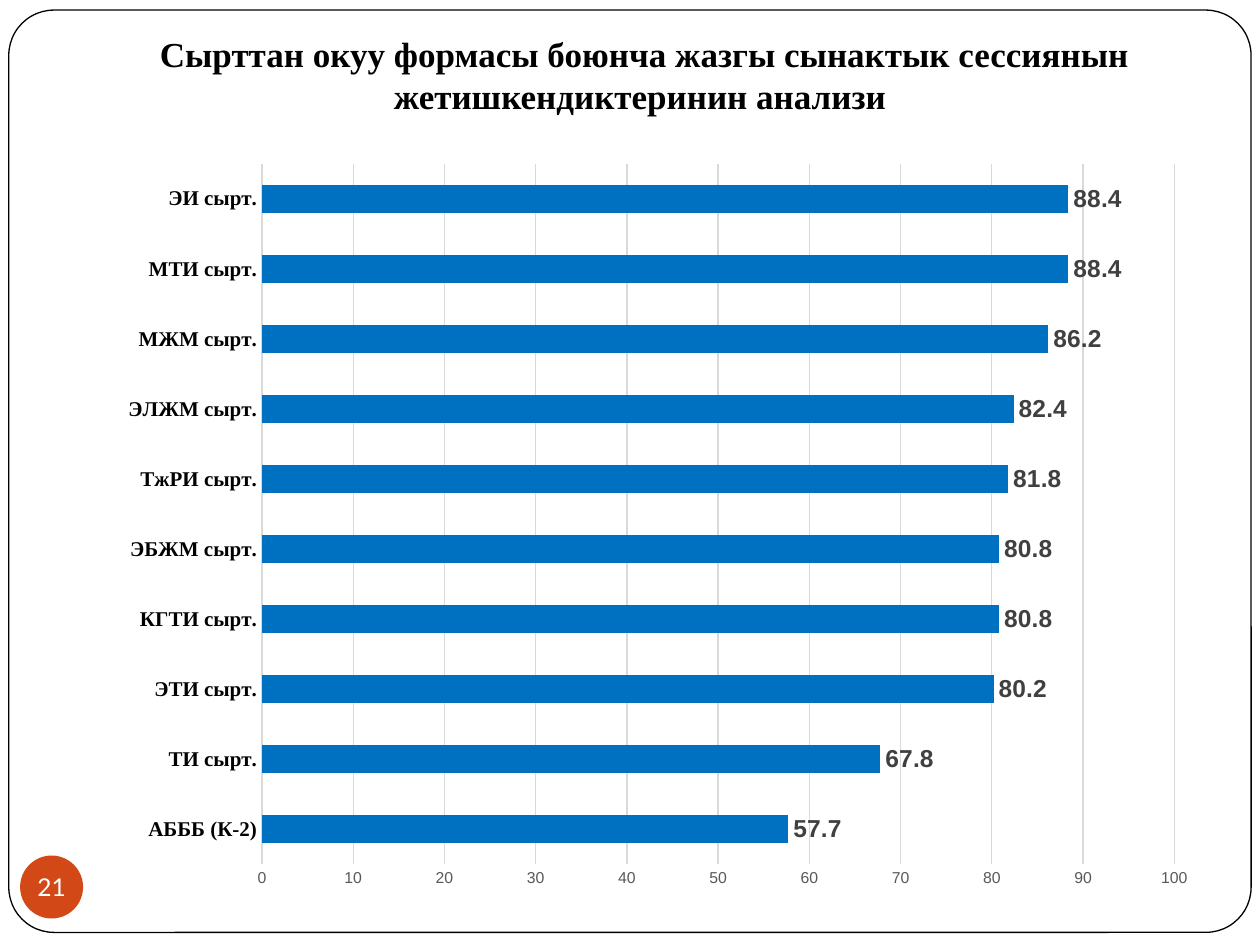
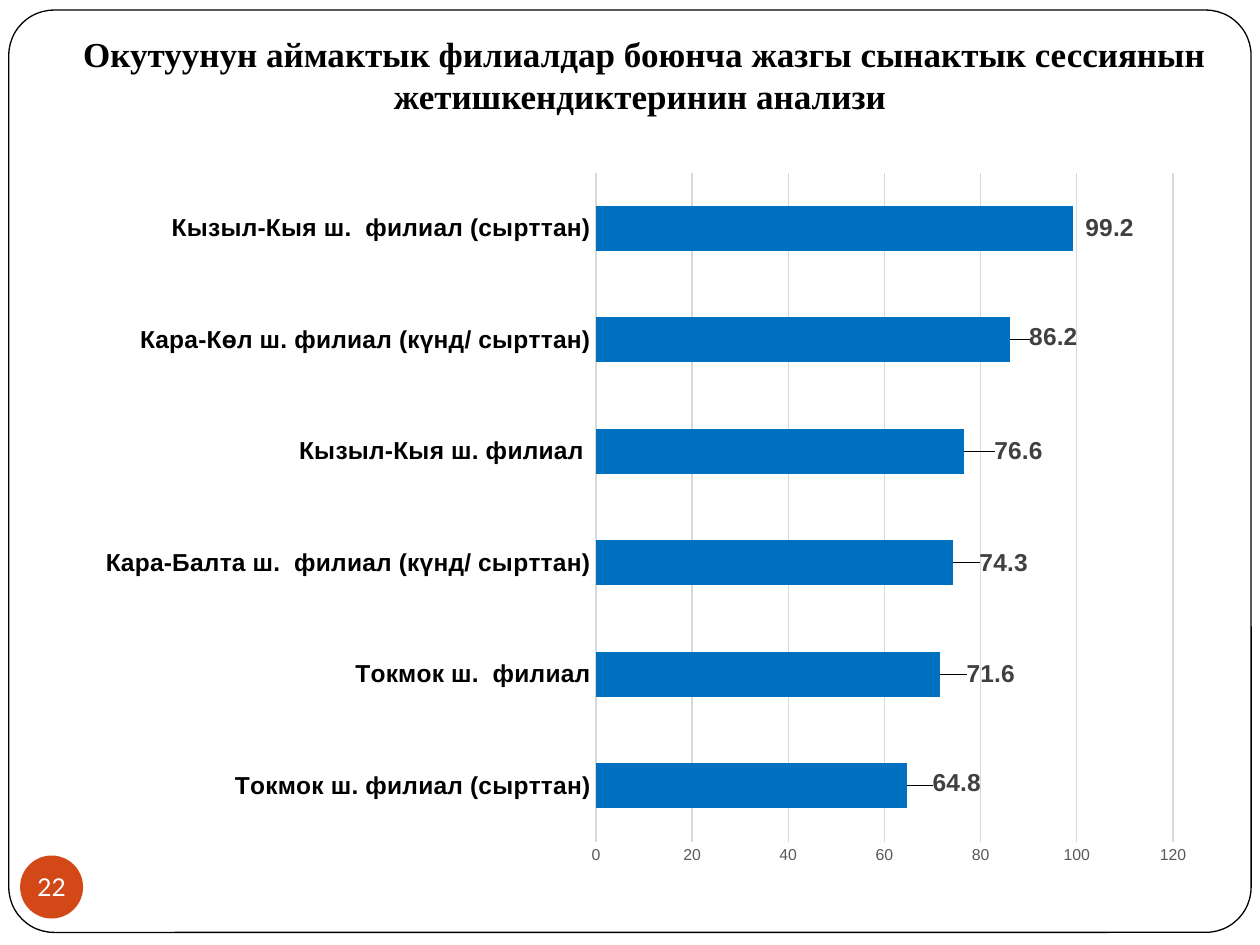
import pptx
import pptx.chart.data
import pptx.dml.color
import pptx.enum.chart
import pptx.enum.shapes
import pptx.enum.text
import pptx.oxml
import pptx.oxml.ns
import pptx.util
from pptx.util import Inches

WHITE = pptx.dml.color.RGBColor(0xFF, 0xFF, 0xFF)
BLACK = pptx.dml.color.RGBColor(0, 0, 0)
ORANGE = pptx.dml.color.RGBColor(0xD3, 0x48, 0x17)
BLUE = pptx.dml.color.RGBColor(0x00, 0x70, 0xC0)
DARK_GREY = pptx.dml.color.RGBColor(0x40, 0x40, 0x40)
MID_GREY = pptx.dml.color.RGBColor(0x59, 0x59, 0x59)
GRID_GREY = pptx.dml.color.RGBColor(0xD9, 0xD9, 0xD9)
SERIF = "Times New Roman"
SANS = "Arial"

EXTRAMURAL_RESULTS = [
    ("АБББ (К-2)", 57.7),
    ("ТИ сырт.", 67.8),
    ("ЭТИ сырт.", 80.2),
    ("КГТИ сырт.", 80.8),
    ("ЭБЖМ сырт.", 80.8),
    ("ТжРИ сырт.", 81.8),
    ("ЭЛЖМ сырт.", 82.4),
    ("МЖМ сырт.", 86.2),
    ("МТИ сырт.", 88.4),
    ("ЭИ сырт.", 88.4),
]
BRANCH_RESULTS = [
    ("Токмок ш. филиал (сырттан)", 64.8),
    ("Токмок ш.  филиал", 71.6),
    ("Кара-Балта ш.  филиал (күнд/ сырттан)", 74.3),
    ("Кызыл-Кыя ш. филиал ", 76.6),
    ("Кара-Көл ш. филиал (күнд/ сырттан)", 86.2),
    ("Кызыл-Кыя ш.  филиал (сырттан)", 99.2),
]
# Label shifts in inches (right, down), one for each branch
BRANCH_LABEL_SHIFTS = [(0.16, -0.02), (0.17, 0), (0.17, 0),
                       (0.2, 0), (0.11, -0.02), (0.06, 0)]


def style_font(font, name, size, color, bold=False):
    font.name = name
    font.size = pptx.util.Pt(size)
    font.color.rgb = color
    font.bold = bold


def add_plain_shape(page, kind, place, fill):
    shape = page.shapes.add_shape(kind, *map(Inches, place))
    shape.shadow.inherit = False
    shape.fill.solid()
    shape.fill.fore_color.rgb = fill
    return shape


def add_frame(page):
    frame = add_plain_shape(page, pptx.enum.shapes.MSO_SHAPE.ROUNDED_RECTANGLE,
                            (0.07, 0.08, 9.86, 7.32), WHITE)
    frame.adjustments[0] = 0.049
    frame.line.color.rgb = BLACK
    frame.line.width = pptx.util.Pt(0.75)


def write_centred(shape, text, name, size, color, bold=False):
    para = shape.text_frame.paragraphs[0]
    para.text = text
    para.alignment = pptx.enum.text.PP_ALIGN.CENTER
    style_font(para.runs[0].font, name, size, color, bold)


def add_page_number(page, number):
    badge = add_plain_shape(page, pptx.enum.shapes.MSO_SHAPE.OVAL,
                            (0.16, 6.79, 0.5, 0.5), ORANGE)
    badge.line.fill.background()
    frame = badge.text_frame
    frame.margin_left = frame.margin_right = 0
    frame.margin_top = frame.margin_bottom = 0
    frame.vertical_anchor = pptx.enum.text.MSO_ANCHOR.MIDDLE
    write_centred(badge, str(number), "Lato", 14, WHITE)


def add_title(page, text):
    box = page.shapes.add_textbox(*map(Inches, (0.43, 0.21, 9.37, 0.77)))
    box.text_frame.word_wrap = True
    write_centred(box, text, SERIF, 20, BLACK, bold=True)


def make_layout(**settings):
    """Return a c:layout element with the given manual settings."""
    parts = "".join(f'<c:{key} val="{value}"/>' for key, value in settings.items())
    return pptx.oxml.parse_xml(
        f'<c:layout {pptx.oxml.ns.nsdecls("c")}>'
        f'<c:manualLayout>{parts}</c:manualLayout></c:layout>')


def place_plot(chart, place, plot_place):
    """Fix the inner plot area, given like the chart in slide inches."""
    left, top, width, height = place
    plot_left, plot_top, plot_width, plot_height = plot_place
    area = chart.plots[0]._element.getparent()
    for layout in area.xpath("c:layout"):
        area.remove(layout)
    area.insert(0, make_layout(
        layoutTarget="inner", xMode="edge", yMode="edge",
        x=(plot_left - left) / width, y=(plot_top - top) / height,
        w=plot_width / width, h=plot_height / height))


def style_axes(chart, category_font, category_size, maximum, step):
    for axis in (chart.category_axis, chart.value_axis):
        axis.major_tick_mark = pptx.enum.chart.XL_TICK_MARK.NONE
        axis.minor_tick_mark = pptx.enum.chart.XL_TICK_MARK.NONE
        axis.format.line.fill.background()
    style_font(chart.category_axis.tick_labels.font,
               category_font, category_size, BLACK, bold=True)
    values = chart.value_axis
    values.minimum_scale = 0
    values.maximum_scale = maximum
    values.major_unit = step
    style_font(values.tick_labels.font, SANS, 9, MID_GREY)
    values.has_major_gridlines = True
    values.major_gridlines.format.line.color.rgb = GRID_GREY
    values.major_gridlines.format.line.width = pptx.util.Pt(0.75)


def shift_labels(series, shifts, place):
    width, height = place[2:]
    for index, (right, down) in enumerate(shifts):
        label = series.points[index].data_label
        style_font(label.font, SANS, 14, DARK_GREY, bold=True)
        label.position = pptx.enum.chart.XL_LABEL_POSITION.OUTSIDE_END
        element = series._element.xpath(f'c:dLbls/c:dLbl[c:idx/@val="{index}"]')[0]
        element.insert(1, make_layout(x=right / width, y=down / height))


def add_bar_chart(page, results, place, plot_place, category_font,
                  category_size, maximum, step, label_shifts=()):
    data = pptx.chart.data.CategoryChartData()
    data.categories = [name for name, _ in results]
    data.add_series("Series 1", [value for _, value in results])
    chart = page.shapes.add_chart(pptx.enum.chart.XL_CHART_TYPE.BAR_CLUSTERED,
                                  *map(Inches, place), data).chart
    style_font(chart.font, SANS, 10, BLACK)
    chart.has_legend = False
    chart.has_title = False
    plot = chart.plots[0]
    plot.gap_width = 150
    plot.vary_by_categories = False
    series = plot.series[0]
    series.format.fill.solid()
    series.format.fill.fore_color.rgb = BLUE
    labels = series.data_labels
    labels.show_value = True
    labels.position = pptx.enum.chart.XL_LABEL_POSITION.OUTSIDE_END
    style_font(labels.font, SANS, 14, DARK_GREY, bold=True)
    shift_labels(series, label_shifts, place)
    style_axes(chart, category_font, category_size, maximum, step)
    place_plot(chart, place, plot_place)


def add_page(deck, number, title):
    page = deck.slides.add_slide(deck.slide_layouts[6])
    add_frame(page)
    add_page_number(page, number)
    add_title(page, title)
    return page


def main():
    deck = pptx.Presentation()
    deck.slide_width = Inches(10)
    deck.slide_height = Inches(7.5)

    page = add_page(deck, 21, "Сырттан окуу формасы боюнча жазгы сынактык "
                              "сессиянын жетишкендиктеринин анализи ")
    add_bar_chart(page, EXTRAMURAL_RESULTS, (0.85, 1.18, 8.75, 5.98),
                  (2.08, 1.3, 7.24, 5.56), SERIF, 12, maximum=100, step=10)

    page = add_page(deck, 22, "Окутуунун аймактык филиалдар боюнча жазгы сынактык "
                              "сессиянын жетишкендиктеринин анализи ")
    add_bar_chart(page, BRANCH_RESULTS, (0.66, 1.25, 8.93, 5.73),
                  (4.73, 1.37, 4.58, 5.31), SANS, 14, maximum=120, step=20,
                  label_shifts=BRANCH_LABEL_SHIFTS)

    deck.save("out.pptx")


if __name__ == "__main__":
    main()
